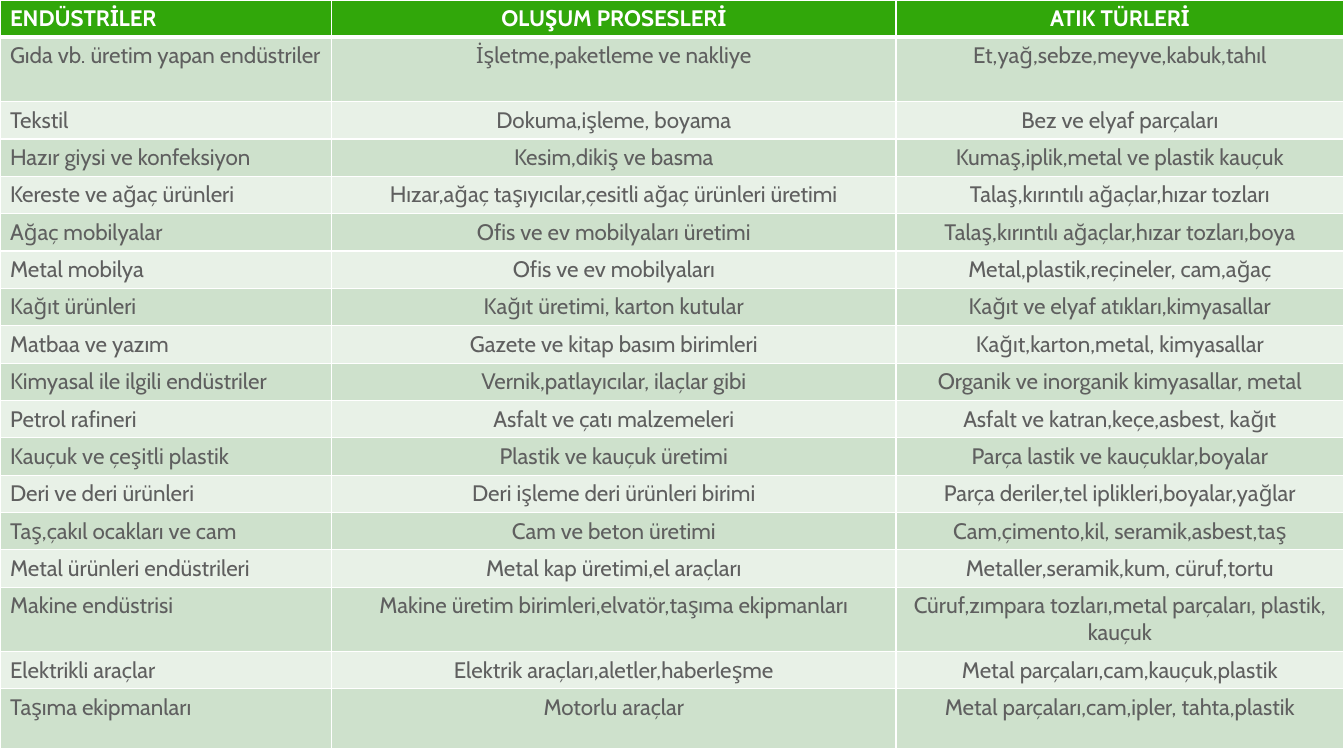
import pptx
import pptx.dml.color
import pptx.enum.text
import pptx.oxml
import pptx.oxml.ns
import pptx.util
from dataclasses import dataclass

Pt = pptx.util.Pt
RGB = pptx.dml.color.RGBColor.from_string
ALIGN = pptx.enum.text.PP_ALIGN


@dataclass
class Theme:
    font: str = "Cabin"
    size: int = 16
    header_fill: str = "31A70A"
    header_text: str = "FFFFFF"
    body_text: str = "5F5F5F"
    dark_band: str = "CEE1CC"
    light_band: str = "E8F1E7"
    border: str = "FFFFFF"


theme = Theme()

rows = [
    ("ENDÜSTRİLER", "OLUŞUM PROSESLERİ", "ATIK TÜRLERİ"),
    ("Gıda vb. üretim yapan endüstriler", "İşletme,paketleme ve nakliye", "Et,yağ,sebze,meyve,kabuk,tahıl"),
    ("Tekstil", "Dokuma,işleme, boyama", "Bez ve elyaf parçaları"),
    ("Hazır giysi ve konfeksiyon", "Kesim,dikiş ve basma", "Kumaş,iplik,metal ve plastik kauçuk"),
    ("Kereste ve ağaç ürünleri", "Hızar,ağaç taşıyıcılar,çesitli ağaç ürünleri üretimi",
     "Talaş,kırıntılı ağaçlar,hızar tozları"),
    ("Ağaç mobilyalar", "Ofis ve ev mobilyaları üretimi", "Talaş,kırıntılı ağaçlar,hızar tozları,boya"),
    ("Metal mobilya", "Ofis ve ev mobilyaları", "Metal,plastik,reçineler, cam,ağaç"),
    ("Kağıt ürünleri", "Kağıt üretimi, karton kutular", "Kağıt ve elyaf atıkları,kimyasallar"),
    ("Matbaa ve yazım", "Gazete ve kitap basım birimleri", "Kağıt,karton,metal, kimyasallar"),
    ("Kimyasal ile ilgili endüstriler", "Vernik,patlayıcılar, ilaçlar gibi",
     "Organik ve inorganik kimyasallar, metal"),
    ("Petrol rafineri", "Asfalt ve çatı malzemeleri", "Asfalt ve katran,keçe,asbest, kağıt"),
    ("Kauçuk ve çeşitli plastik", "Plastik ve kauçuk üretimi", "Parça lastik ve kauçuklar,boyalar"),
    ("Deri ve deri ürünleri", "Deri işleme deri ürünleri birimi", "Parça deriler,tel iplikleri,boyalar,yağlar"),
    ("Taş,çakıl ocakları ve cam", "Cam ve beton üretimi", "Cam,çimento,kil, seramik,asbest,taş"),
    ("Metal ürünleri endüstrileri", "Metal kap üretimi,el araçları", "Metaller,seramik,kum, cüruf,tortu"),
    ("Makine endüstrisi", "Makine üretim birimleri,elvatör,taşıma ekipmanları",
     "Cüruf,zımpara tozları,metal parçaları, plastik, kauçuk"),
    ("Elektrikli araçlar", "Elektrik araçları,aletler,haberleşme", "Metal parçaları,cam,kauçuk,plastik"),
    ("Taşıma ekipmanları", "Motorlu araçlar", "Metal parçaları,cam,ipler, tahta,plastik"),
]
column_widths = [237, 403, 320]
row_height = 26.7
tall_rows = {1: 46, 15: 46, 17: 42.3}
row_heights = [tall_rows.get(index, row_height) for index in range(len(rows))]


def add_border(cell, side, width):
    cell._tc.get_or_add_tcPr().append(pptx.oxml.parse_xml(
        f'<a:ln{side} {pptx.oxml.ns.nsdecls("a")} w="{Pt(width)}"><a:solidFill>'
        f'<a:srgbClr val="{theme.border}"/></a:solidFill></a:ln{side}>'))


# Deck and page
deck = pptx.Presentation()
deck.slide_width, deck.slide_height = Pt(960), Pt(540)
page = deck.slides.add_slide(deck.slide_layouts[6])

# Table frame
frame = page.shapes.add_table(len(rows), len(column_widths), Pt(0), Pt(0),
                              Pt(sum(column_widths)), Pt(sum(row_heights)))
table = frame.table
for column, width in zip(table.columns, column_widths):
    column.width = Pt(width)
for row, height in zip(table.rows, row_heights):
    row.height = Pt(height)

# Cells: green header, then alternating bands
for row_index, texts in enumerate(rows):
    is_header = row_index == 0
    band = theme.dark_band if row_index % 2 else theme.light_band
    for column_index, text in enumerate(texts):
        cell = table.cell(row_index, column_index)
        borders = {"L": 1, "R": 1, "T": 3 if row_index == 1 else 1, "B": 3 if is_header else 1}
        for side, width in borders.items():
            add_border(cell, side, width)
        cell.fill.solid()
        cell.fill.fore_color.rgb = RGB(theme.header_fill if is_header else band)
        para = cell.text_frame.paragraphs[0]
        para.alignment = ALIGN.CENTER if column_index else ALIGN.JUSTIFY
        span = para.add_run()
        span.text = text
        span.font.name = theme.font
        span.font.size = Pt(theme.size)
        span.font.bold = is_header
        span.font.color.rgb = RGB(theme.header_text if is_header else theme.body_text)

deck.save("out.pptx")
